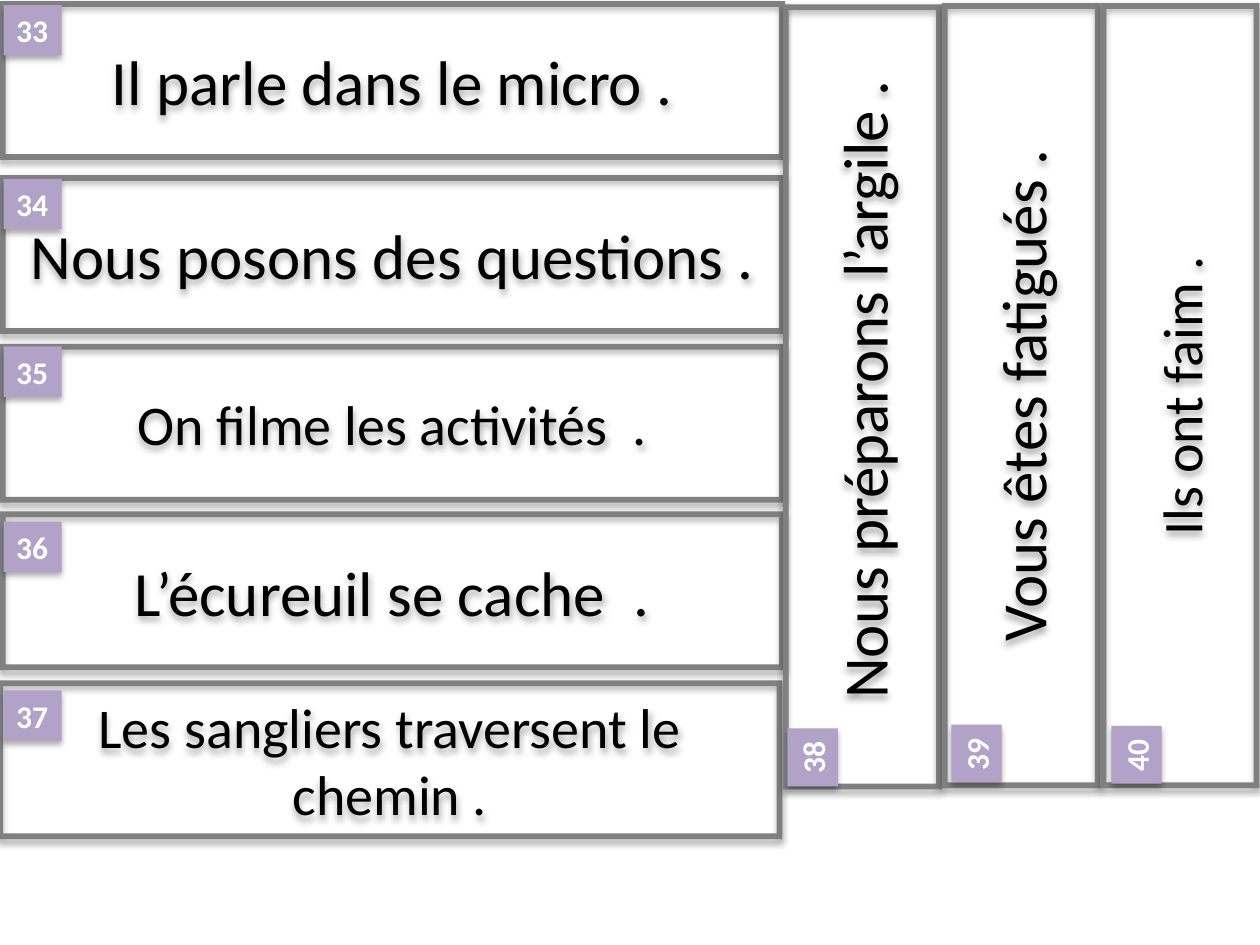
"""Build a slide of numbered French sentence strips, five across and three upright."""
from lxml.etree import SubElement
from pptx import Presentation
from pptx.dml.color import RGBColor
from pptx.enum.shapes import MSO_SHAPE
from pptx.enum.text import MSO_ANCHOR, MSO_AUTO_SIZE, PP_ALIGN
from pptx.oxml.ns import qn
from pptx.util import Inches, Pt

GRAY = RGBColor(0x80, 0x80, 0x80)
LILAC = RGBColor(0xB3, 0xA2, 0xC7)
BLACK = RGBColor(0, 0, 0)
WHITE = RGBColor(0xFF, 0xFF, 0xFF)

STRIPS = [
    ("Il parle dans le micro .", 36, (0, 0.01), (0.03, 0.04), 0),
    ("Nous posons des questions .", 36, (0, 1.39), (0.03, 1.42), 0),
    ("On filme les activités  .", 32, (0, 2.73), (0.03, 2.75), 0),
    ("L’écureuil se cache  .", 36, (0, 4.06), (0.03, 4.14), 0),
    ("Les sangliers traversent le chemin .", 32, (-0.02, 5.4), (0.03, 5.48), 0),
    (" Nous préparons l’argile .", 36, (3.73, 2.52), (6.22, 5.81), 270),
    ("Vous êtes fatigués .", 36, (4.99, 2.51), (7.52, 5.78), 270),
    ("Ils ont faim .", 32, (6.25, 2.51), (8.79, 5.79), 270),
]


def paint(shape, fill, turn):
    shape.rotation = turn
    shape.fill.solid()
    shape.fill.fore_color.rgb = fill
    shape.line.fill.background()
    shape.shadow.inherit = False
    effects = shape._element.spPr.find(qn("a:effectLst"))
    shade = SubElement(effects, qn("a:outerShdw"), blurRad=str(Pt(3.5)),
                       dist=str(Pt(2.2)), dir="5400000", algn="ctr", rotWithShape="0")
    color = SubElement(shade, qn("a:srgbClr"), val="000000")
    SubElement(color, qn("a:alpha"), val="32000")


def write(shape, text, color, **style):
    run = shape.text_frame.paragraphs[0].add_run()
    run.text = text
    run.font.color.rgb = color
    for key, value in {"name": "Calibri", **style}.items():
        setattr(run.font, key, value)


deck = Presentation()
deck.slide_width, deck.slide_height = Inches(10), Inches(7.5)
slide = deck.slides.add_slide(deck.slide_layouts[6])

for text, size, (left, top), spot, turn in STRIPS:
    strip = slide.shapes.add_shape(
        MSO_SHAPE.FRAME, Inches(left), Inches(top), Inches(6.23), Inches(1.26))
    strip.adjustments[0] = 0.036
    paint(strip, GRAY, turn)
    strip.text_frame.word_wrap = True
    strip.text_frame.vertical_anchor = MSO_ANCHOR.MIDDLE
    strip.text_frame.paragraphs[0].alignment = PP_ALIGN.CENTER
    write(strip, text, BLACK, size=Pt(size))

for number, (text, size, place, (left, top), turn) in enumerate(STRIPS, 33):
    tag = slide.shapes.add_textbox(
        Inches(left), Inches(top), Inches(0.46), Inches(0.4))
    paint(tag, LILAC, turn)
    tag.text_frame.word_wrap = False
    tag.text_frame.auto_size = MSO_AUTO_SIZE.SHAPE_TO_FIT_TEXT
    write(tag, str(number), WHITE, size=Pt(18), bold=True)

deck.save("out.pptx")
